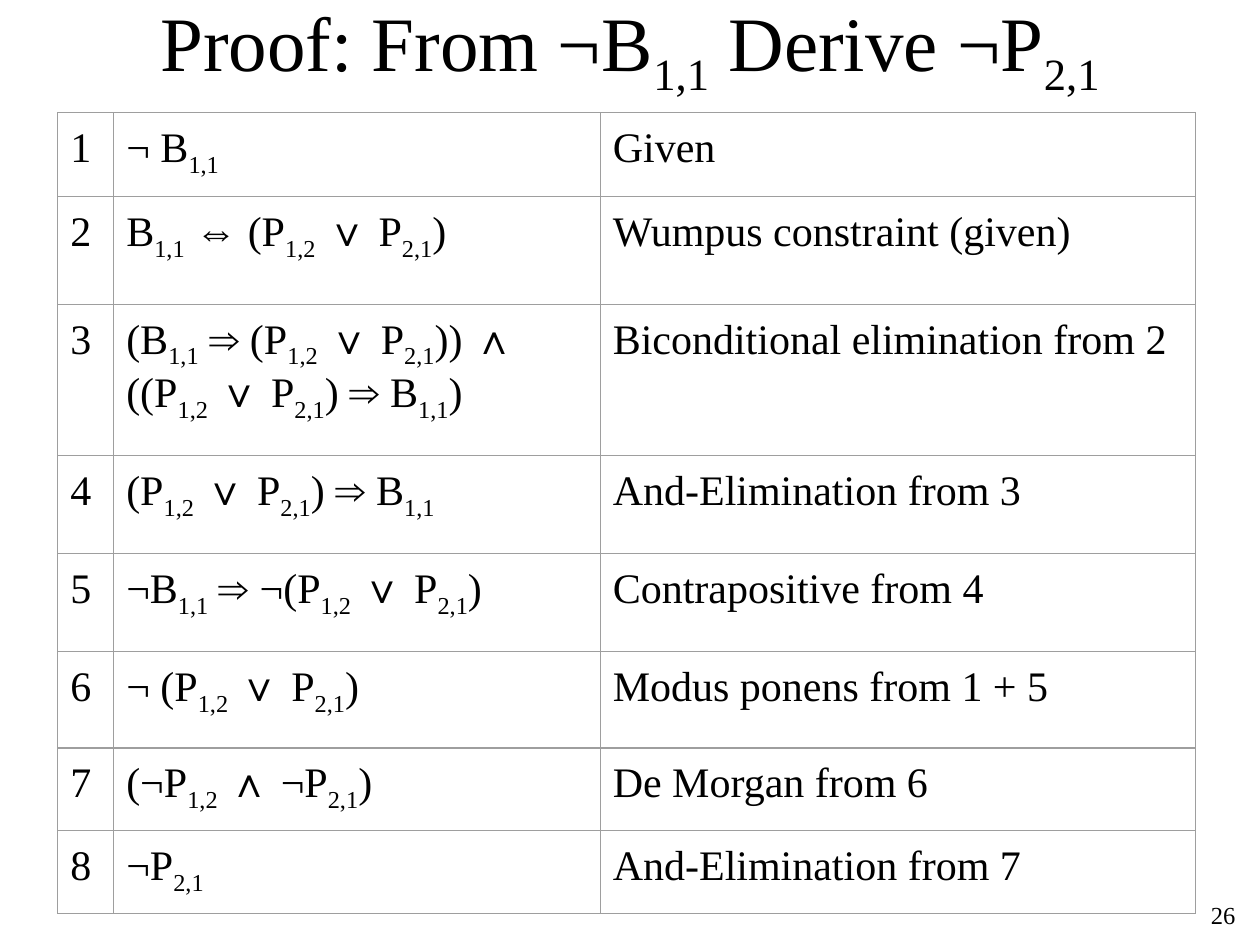
"""Build a slide with a table that proves a negated literal step by step."""
from lxml.etree import SubElement
from pptx import Presentation
from pptx.dml.color import RGBColor
from pptx.enum.text import MSO_ANCHOR, PP_ALIGN
from pptx.oxml.ns import qn
from pptx.util import Pt

BLACK = RGBColor(0x00, 0x00, 0x00)
WHITE = RGBColor(0xFF, 0xFF, 0xFF)
GREY = RGBColor(0x9E, 0x9E, 0x9E)
FONT_NAME = "Times New Roman"
SUBSCRIPT_MARK = "_"

COLUMN_WIDTHS = [32, 278, 340]
ROW_HEIGHTS = [48, 61.5, 86.5, 56, 56, 55, 45, 45]
CELL_FORMAT = {
    "margin_left": Pt(7.2),
    "margin_right": Pt(7.2),
    "margin_top": Pt(7.2),
    "margin_bottom": Pt(7.2),
    "vertical_anchor": MSO_ANCHOR.TOP,
}
PROOF_STEPS = [
    ("¬ B_1,1_", "Given"),
    ("B_1,1_ ⇔ (P_1,2_ ∨ P_2,1_)", "Wumpus constraint (given)"),
    (
        "(B_1,1_ ⇒ (P_1,2_ ∨ P_2,1_)) ∧\n((P_1,2_ ∨ P_2,1_) ⇒ B_1,1_)",
        "Biconditional elimination from 2",
    ),
    ("(P_1,2_ ∨ P_2,1_) ⇒ B_1,1_", "And-Elimination from 3"),
    ("¬B_1,1_ ⇒ ¬(P_1,2_ ∨ P_2,1_)", "Contrapositive from 4"),
    ("¬ (P_1,2_ ∨ P_2,1_)", "Modus ponens from 1 + 5"),
    ("(¬P_1,2_ ∧ ¬P_2,1_)", "De Morgan from 6"),
    ("¬P_2,1_", "And-Elimination from 7"),
]
TEXT_BOXES = [
    ("Proof: From ¬B_1,1_ Derive ¬P_2,1_", (54, -18, 630 - 18, 90), 44,
     PP_ALIGN.CENTER, MSO_ANCHOR.MIDDLE),
    ("26", (563, 511, 150, 23), 14, PP_ALIGN.RIGHT, MSO_ANCHOR.TOP),
]


def write_formula(paragraph, text, size):
    for line_number, line in enumerate(text.split("\n")):
        if line_number:
            paragraph.add_line_break()
        for position, part in enumerate(line.split(SUBSCRIPT_MARK)):
            if not part:
                continue
            run = paragraph.add_run()
            run.text = part
            for name, value in {"name": FONT_NAME, "size": Pt(size)}.items():
                setattr(run.font, name, value)
            run.font.color.rgb = BLACK
            if position % 2:
                run.font._element.set("baseline", "-25000")


def draw_borders(cell):
    properties = cell._tc.get_or_add_tcPr()
    for index, side in enumerate(("lnL", "lnR", "lnT", "lnB")):
        line = properties.makeelement(qn(f"a:{side}"), {"w": str(Pt(0.75))})
        fill = SubElement(line, qn("a:solidFill"))
        SubElement(fill, qn("a:srgbClr"), val=str(GREY))
        properties.insert(index, line)


presentation = Presentation()
presentation.slide_width = Pt(720)
presentation.slide_height = Pt(540)
slide = presentation.slides.add_slide(presentation.slide_layouts[6])
slide.background.fill.solid()
slide.background.fill.fore_color.rgb = WHITE

for text, bounds, size, alignment, anchor in TEXT_BOXES:
    text_box = slide.shapes.add_textbox(*map(Pt, bounds))
    text_frame = text_box.text_frame
    for name, value in {"word_wrap": True, "vertical_anchor": anchor}.items():
        setattr(text_frame, name, value)
    paragraph = text_frame.paragraphs[0]
    paragraph.alignment = alignment
    write_formula(paragraph, text, size)

table = slide.shapes.add_table(
    len(PROOF_STEPS), len(COLUMN_WIDTHS), Pt(33), Pt(64.5),
    Pt(sum(COLUMN_WIDTHS)), Pt(sum(ROW_HEIGHTS)),
).table
for name, value in {"first_row": False, "horz_banding": False}.items():
    setattr(table, name, value)
for column, width in zip(table.columns, COLUMN_WIDTHS):
    column.width = Pt(width)
for row, height in zip(table.rows, ROW_HEIGHTS):
    row.height = Pt(height)

for row_index, (formula, reason) in enumerate(PROOF_STEPS):
    for column_index, text in enumerate((str(row_index + 1), formula, reason)):
        cell = table.cell(row_index, column_index)
        for name, value in CELL_FORMAT.items():
            setattr(cell, name, value)
        cell.fill.solid()
        cell.fill.fore_color.rgb = WHITE
        draw_borders(cell)
        paragraph = cell.text_frame.paragraphs[0]
        paragraph.space_before = Pt(6.4)
        write_formula(paragraph, text, 24)

presentation.save("out.pptx")
